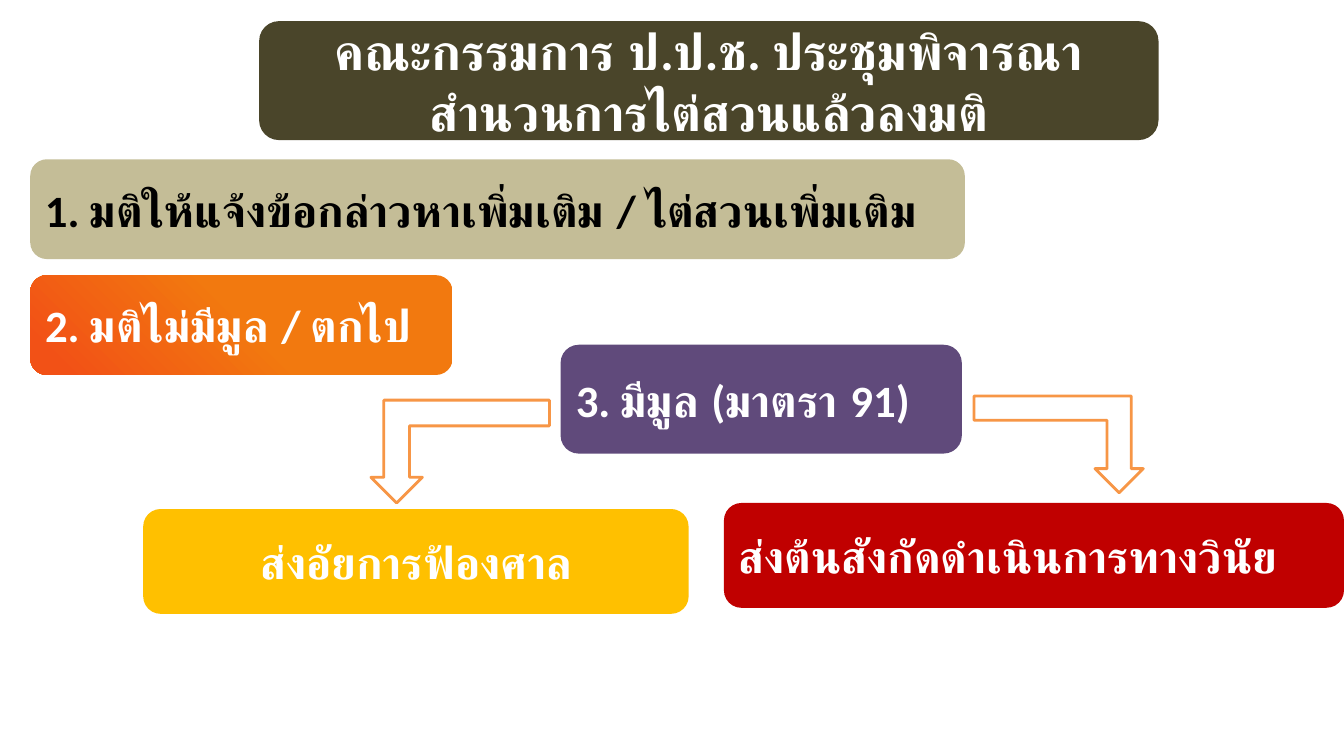
from pptx import Presentation
from pptx.dml.color import RGBColor
from pptx.enum.lang import MSO_LANGUAGE_ID
from pptx.enum.shapes import MSO_SHAPE
from pptx.enum.text import MSO_ANCHOR, PP_ALIGN
from pptx.util import Inches, Pt

WIDTH, HEIGHT = 13.33, 7.5
LEFT_MARGIN = 0.3
ROW_HEIGHT = 0.99
OUTCOME_HEIGHT = 1.04

COLORS = {
    "white": "FFFFFF",
    "black": "000000",
    "olive": "4A452A",
    "sand": "C4BD97",
    "orange": "F2790F",
    "red_orange": "F25116",
    "purple": "604A7B",
    "gold": "FFC000",
    "red": "C00000",
    "arrow_line": "F79646",
}


def color(name):
    return RGBColor.from_string(COLORS[name])


def add_preset(slide, preset, box, fill):
    """Add a flat shape; box is left, top, width, height in inches."""
    shape = slide.shapes.add_shape(preset, *(Inches(length) for length in box))
    shape.shadow.inherit = False
    shape.fill.solid()
    shape.fill.fore_color.rgb = color(fill)
    shape.line.fill.background()
    return shape


def add_panel(slide, text, box, fill, text_color="white", size=32,
              align=PP_ALIGN.LEFT):
    panel = add_preset(slide, MSO_SHAPE.ROUNDED_RECTANGLE, box, fill)
    frame = panel.text_frame
    frame.word_wrap = True
    frame.vertical_anchor = MSO_ANCHOR.MIDDLE
    paragraph = frame.paragraphs[0]
    paragraph.text = text
    paragraph.alignment = align
    font = paragraph.font
    font.name = "Calibri"
    font.size = Pt(size)
    font.bold = True
    font.color.rgb = color(text_color)
    font.language_id = MSO_LANGUAGE_ID.THAI
    return panel


def set_gradient(shape, stops, angle):
    shape.fill.gradient()
    shape.fill.gradient_angle = angle
    for stop, (position, name) in zip(shape.fill.gradient_stops, stops):
        stop.position = position
        stop.color.rgb = color(name)


def add_bent_arrow(slide, box, flips):
    arrow = add_preset(slide, MSO_SHAPE.BENT_UP_ARROW, box, "white")
    arrow.line.color.rgb = color("arrow_line")
    arrow.line.width = Pt(2)
    transform = arrow.element.spPr.get_or_add_xfrm()
    for flip in flips:
        transform.set(flip, "1")


def main():
    presentation = Presentation()
    presentation.slide_width = Inches(WIDTH)
    presentation.slide_height = Inches(HEIGHT)
    slide = presentation.slides.add_slide(presentation.slide_layouts[6])

    # Title
    add_panel(slide, "คณะกรรมการ ป.ป.ช. ประชุมพิจารณาสำนวนการไต่สวนแล้วลงมติ",
              (2.57, 0.21, 8.92, 1.18), "olive", size=36, align=PP_ALIGN.CENTER)

    # Three possible resolutions
    add_panel(slide, "1. มติให้แจ้งข้อกล่าวหาเพิ่มเติม / ไต่สวนเพิ่มเติม",
              (LEFT_MARGIN, 1.58, 9.27, ROW_HEIGHT), "sand", "black")
    dismissed = add_panel(slide, "2. มติไม่มีมูล / ตกไป",
                          (LEFT_MARGIN, 2.73, 4.19, ROW_HEIGHT), "orange")
    set_gradient(dismissed, [(0.48, "orange"), (0.93, "red_orange")], 225)
    add_panel(slide, "3. มีมูล (มาตรา 91)", (5.56, 3.42, 3.98, 1.08), "purple")

    # Outcomes of the third resolution
    add_panel(slide, "ส่งอัยการฟ้องศาล", (1.42, 5.05, 5.41, OUTCOME_HEIGHT),
              "gold", align=PP_ALIGN.CENTER)
    add_panel(slide, "ส่งต้นสังกัดดำเนินการทางวินัย",
              (7.18, 4.99, WIDTH - 7.18, OUTCOME_HEIGHT), "red")

    # Arrows to the outcomes
    add_bent_arrow(slide, (9.66, 3.93, 1.68, 0.96), ["flipV"])
    add_bent_arrow(slide, (3.68, 3.97, 1.77, 1.02), ["flipH", "flipV"])

    presentation.save("out.pptx")


if __name__ == "__main__":
    main()
